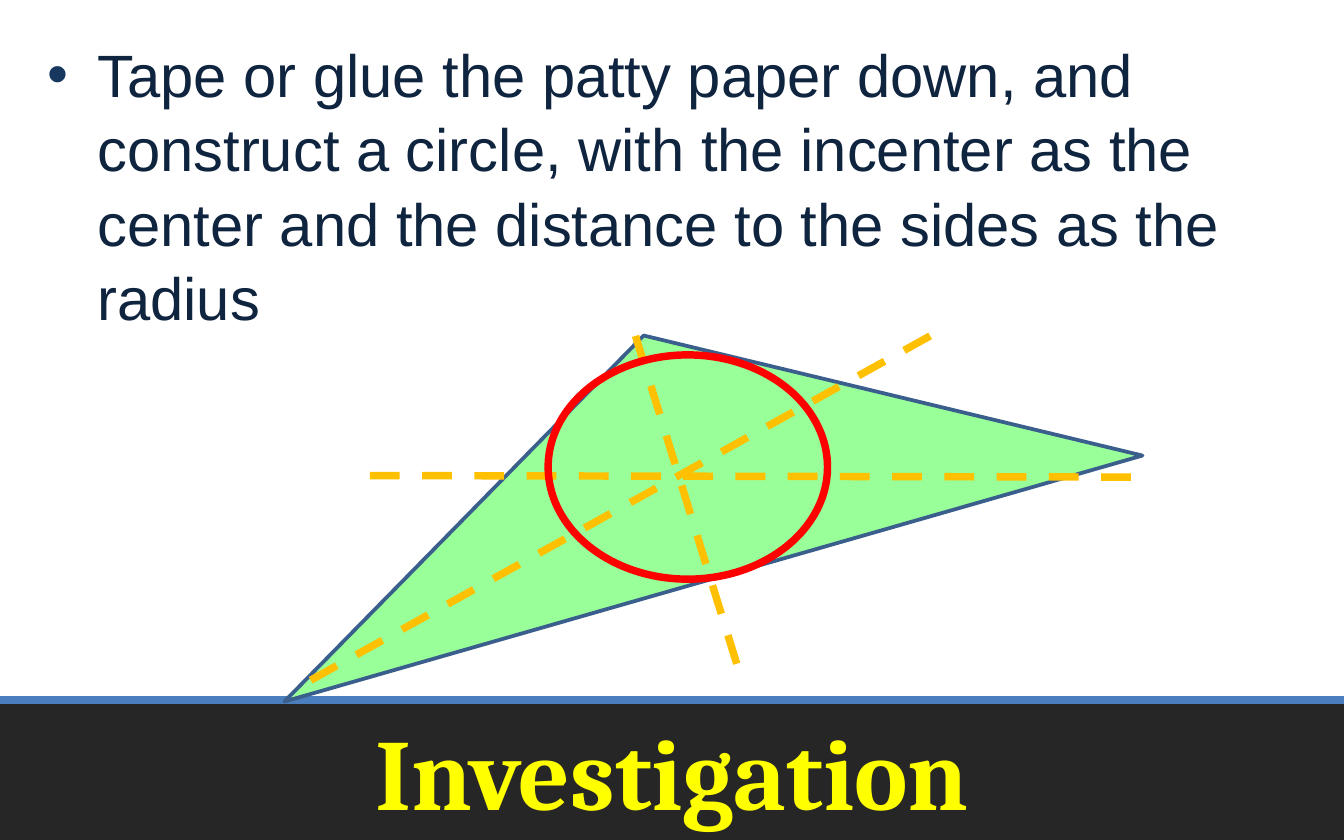
import pptx
import pptx.dml.color
import pptx.enum.dml
import pptx.enum.shapes
import pptx.enum.text
import pptx.oxml
import pptx.oxml.ns
import pptx.util
from pptx.util import Cm, Pt

# Content
TITLE = "Investigation"
STEP = ("Tape or glue the patty paper down, and construct a circle, with the incenter "
        "as the center and the distance to the sides as the radius")

# Geometry in centimetres: (left, top, width, height) or (start, end)
PAGE_WIDTH, PAGE_HEIGHT = 25.4, 15.88
BAR_TOP = 13.23
MARGIN = 0.64
TRIANGLE = (4.39, 6.25, 16.87, 4.78)
TRIANGLE_TURN = -16
INCIRCLE = (10.36, 6.71, 5.28, 4.24)
BISECTORS = [
    ((12.01, 6.35), (13.97, 12.7)),
    ((17.58, 6.35), (5.51, 13.06)),
    ((6.99, 8.99), (21.72, 9.02)),
]
INDENT = 0.95

THEME = {
    "bar": "262626", "rule": "4B7EBC",
    "triangle": "99FF99", "triangle_line": "3A5F8C",
    "bisector": "FFC000", "circle": "FF0000",
    "title": "FFFF00", "text": "0F243E", "bullet": "17375E",
    "title_font": "Cambria", "text_font": "Arial",
    "title_size": 54, "text_size": 32, "thick": 4, "thin": 2,
}

SHAPE = pptx.enum.shapes.MSO_SHAPE


def color(name):
    return pptx.dml.color.RGBColor.from_string(THEME[name])


def write(box, text, kind, bold=False, align="LEFT", anchor="TOP"):
    frame = box.text_frame
    frame.word_wrap = True
    frame.auto_size = pptx.enum.text.MSO_AUTO_SIZE.NONE
    frame.vertical_anchor = pptx.enum.text.MSO_ANCHOR[anchor]
    para = frame.paragraphs[0]
    para.alignment = pptx.enum.text.PP_ALIGN[align]
    span = para.add_run()
    span.text = text
    span.font.name = THEME[kind + "_font"]
    span.font.size = Pt(THEME[kind + "_size"])
    span.font.bold = bold
    span.font.color.rgb = color(kind)
    return para


def add_bullet(para):
    props = para._p.get_or_add_pPr()
    props.set("marL", str(Cm(INDENT)))
    props.set("indent", str(-Cm(INDENT)))
    namespace = pptx.oxml.ns.nsdecls("a")
    for xml in (f'<a:buClr {namespace}><a:srgbClr val="{THEME["bullet"]}"/></a:buClr>',
                f'<a:buFont {namespace} typeface="{THEME["text_font"]}"/>',
                f'<a:buChar {namespace} char="•"/>'):
        props.append(pptx.oxml.parse_xml(xml))


def add_shape(page, preset, place, fill=None, line=None, width=0):
    shape = page.shapes.add_shape(preset, *map(Cm, place))
    shape.shadow.inherit = False
    if fill:
        shape.fill.solid()
        shape.fill.fore_color.rgb = color(fill)
    else:
        shape.fill.background()
    if line:
        shape.line.color.rgb = color(line)
        shape.line.width = Pt(width)
    else:
        shape.line.fill.background()
    return shape


def add_line(page, start, end, name, dashed=False):
    line = page.shapes.add_connector(
        pptx.enum.shapes.MSO_CONNECTOR.STRAIGHT, *map(Cm, start + end))
    line.line.color.rgb = color(name)
    line.line.width = Pt(THEME["thick"])
    if dashed:
        line.line.dash_style = pptx.enum.dml.MSO_LINE.DASH
    line.element.spPr.append(
        pptx.oxml.parse_xml(f'<a:effectLst {pptx.oxml.ns.nsdecls("a")}/>'))


def main():
    deck = pptx.Presentation()
    deck.slide_width, deck.slide_height = Cm(PAGE_WIDTH), Cm(PAGE_HEIGHT)
    page = deck.slides.add_slide(deck.slide_layouts[5])
    bar_height = PAGE_HEIGHT - BAR_TOP
    inner_width = PAGE_WIDTH - 2 * MARGIN

    # Title bar and its rule
    add_shape(page, SHAPE.RECTANGLE, (0, BAR_TOP, PAGE_WIDTH, bar_height), "bar")
    add_line(page, (0, BAR_TOP), (PAGE_WIDTH, BAR_TOP), "rule")

    # Triangle
    triangle = add_shape(page, SHAPE.ISOSCELES_TRIANGLE, TRIANGLE,
                         "triangle", "triangle_line", THEME["thin"])
    triangle.rotation = TRIANGLE_TURN

    # Title, raised in front of the bar
    title = page.shapes.title
    title.left, title.top = Cm(MARGIN), Cm(BAR_TOP)
    title.width, title.height = Cm(inner_width), Cm(bar_height)
    write(title, TITLE, "title", bold=True, align="CENTER", anchor="MIDDLE")
    page.shapes.element.append(title.element)

    # Instruction
    box = page.shapes.add_textbox(Cm(MARGIN), Cm(0.53), Cm(inner_width), Cm(12.52))
    para = write(box, STEP, "text")
    para.line_spacing = 1.04
    add_bullet(para)

    # Angle bisectors and inscribed circle
    for start, end in BISECTORS:
        add_line(page, start, end, "bisector", dashed=True)
    add_shape(page, SHAPE.OVAL, INCIRCLE, line="circle", width=THEME["thick"])

    deck.save("out.pptx")


if __name__ == "__main__":
    main()
